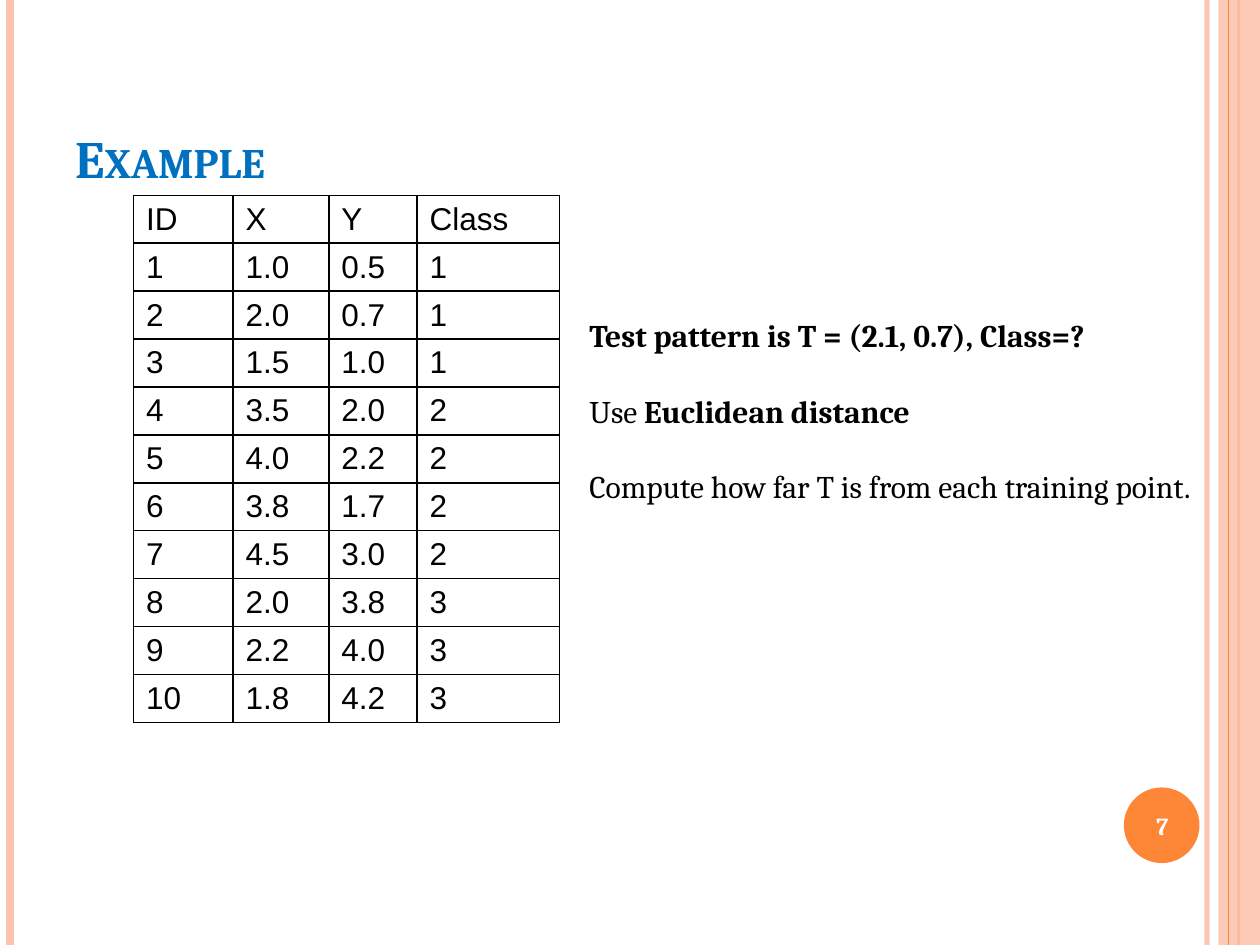
from lxml import etree
from pptx import Presentation
from pptx.dml.color import RGBColor
from pptx.enum.shapes import MSO_CONNECTOR, MSO_SHAPE
from pptx.enum.text import MSO_ANCHOR, PP_ALIGN
from pptx.oxml.ns import qn
from pptx.util import Inches, Pt

LINE = MSO_CONNECTOR.STRAIGHT
RECT, OVAL = MSO_SHAPE.RECTANGLE, MSO_SHAPE.OVAL
MIDDLE, BOTTOM = MSO_ANCHOR.MIDDLE, MSO_ANCHOR.BOTTOM
CENTER, LEFT = PP_ALIGN.CENTER, PP_ALIGN.LEFT

BLACK = RGBColor(0, 0, 0)
WHITE = RGBColor(255, 255, 255)
BLUE = RGBColor(0x00, 0x70, 0xC0)
ORANGE = RGBColor(0xFE, 0x86, 0x37)
PEACH = RGBColor(0xFE, 0xC3, 0xAE)

WIDE, HIGH = 10, 7.5
COLS = (0.79, 0.76, 0.7, 1.13)
ROW = 0.38
HEAD = ("ID", "X", "Y", "Class")
POINTS = (
    ("1.0", "0.5", 1), ("2.0", "0.7", 1), ("1.5", "1.0", 1),
    ("3.5", "2.0", 2), ("4.0", "2.2", 2), ("3.8", "1.7", 2),
    ("4.5", "3.0", 2), ("2.0", "3.8", 3), ("2.2", "4.0", 3),
    ("1.8", "4.2", 3),
)
# Each paragraph is a list of (text, bold) runs.
NOTES = (
    [("Test pattern is T = (2.1, 0.7), Class=?", True)],
    [("Use ", False), ("Euclidean distance", True)],
    [("Compute how far T is from each training point.", False)],
)
# x, colour, width in points, opacity in percent
BARS = (
    (9.58, PEACH, 3, 93), (0.08, PEACH, 4.5, 100),
    (9.83, ORANGE, 1.5, 100),
)


def box(*sides):
    return [Inches(side) for side in sides]


def style(font, color, **form):
    font.color.rgb = color
    for name, value in form.items():
        setattr(font, name, value)


def fade(item, share):
    """Set the opacity of the solid colour in a shape or line."""
    if share < 100:
        tone = next(item._element.spPr.iter(qn("a:srgbClr")))
        etree.SubElement(tone, qn("a:alpha"), val=str(share * 1000))


def add_bar(slide, x, color, width, share=100):
    bar = slide.shapes.add_connector(LINE, *box(x, 0, x, HIGH))
    bar.line.color.rgb = color
    bar.line.width = Pt(width)
    fade(bar, share)
    etree.SubElement(bar._element.spPr, qn("a:effectLst"))


def add_form(slide, kind, place, color, share=100):
    form = slide.shapes.add_shape(kind, *box(*place))
    form.shadow.inherit = False
    form.fill.solid()
    form.fill.fore_color.rgb = color
    form.line.fill.background()
    fade(form, share)


def set_title(slide, text):
    title = slide.shapes.title
    title.left, title.top, title.width, title.height = box(0.5, 0.3, 8.17, 1.25)
    frame = title.text_frame
    frame.text = text
    frame.vertical_anchor = BOTTOM
    para = frame.paragraphs[0]
    para.alignment = LEFT
    font = para.runs[0].font
    style(font, BLUE, name="Cambria", size=Pt(30), bold=True)
    font._element.set("cap", "small")


def add_text(slide, place, paras, color, size, gap=0, align=LEFT, anchor=None):
    frame = slide.shapes.add_textbox(*box(*place)).text_frame
    frame.word_wrap = True
    frame.vertical_anchor = anchor
    for i, runs in enumerate(paras):
        para = frame.add_paragraph() if i else frame.paragraphs[0]
        para.alignment = align
        para.space_before = Pt(gap if i else 0)
        for text, bold in runs:
            run = para.add_run()
            run.text = text
            style(run.font, color, name="Cambria", size=Pt(size), bold=bold)


def rule(cell):
    """Draw a black line on all four sides, before the cell's fill."""
    props = cell._tc.get_or_add_tcPr()
    for i, side in enumerate(("lnL", "lnR", "lnT", "lnB")):
        edge = etree.Element(qn(f"a:{side}"), w=str(Pt(1)))
        fill = etree.SubElement(edge, qn("a:solidFill"))
        etree.SubElement(fill, qn("a:srgbClr"), val=str(BLACK))
        props.insert(i, edge)


def add_grid(slide, x, y, rows):
    size = box(x, y, sum(COLS), ROW * len(rows))
    table = slide.shapes.add_table(len(rows), len(COLS), *size).table
    table.first_row = table.horz_banding = False
    for col, width in zip(table.columns, COLS):
        col.width = Inches(width)
    for line, row in zip(table.rows, rows):
        line.height = Inches(ROW)
        for cell, value in zip(line.cells, row):
            cell.text = str(value)
            cell.vertical_anchor = MIDDLE
            cell.fill.background()
            rule(cell)
            font = cell.text_frame.paragraphs[0].runs[0].font
            style(font, BLACK, name="Arial", size=Pt(18), bold=False)


def main():
    deck = Presentation()
    deck.slide_width, deck.slide_height = box(WIDE, HIGH)
    slide = deck.slides.add_slide(deck.slide_layouts[5])
    for bar in BARS:
        add_bar(slide, *bar)
    add_form(slide, RECT, (9.67, 0, 0.33, HIGH), PEACH, 87)
    add_bar(slide, 9.75, ORANGE, 0.75)
    add_form(slide, OVAL, (8.92, 6.25, 0.6, 0.6), ORANGE)
    set_title(slide, "Example")
    rows = [HEAD] + [(i, *point) for i, point in enumerate(POINTS, 1)]
    add_grid(slide, 1.06, 1.55, rows)
    add_text(slide, (8.89, 6.27, 0.67, 0.57), [[("7", True)]], WHITE, 14,
             align=CENTER, anchor=MIDDLE)
    add_text(slide, (4.58, 2.46, 5, 1.92), NOTES, BLACK, 18, gap=21.5)
    deck.save("out.pptx")


if __name__ == "__main__":
    main()
